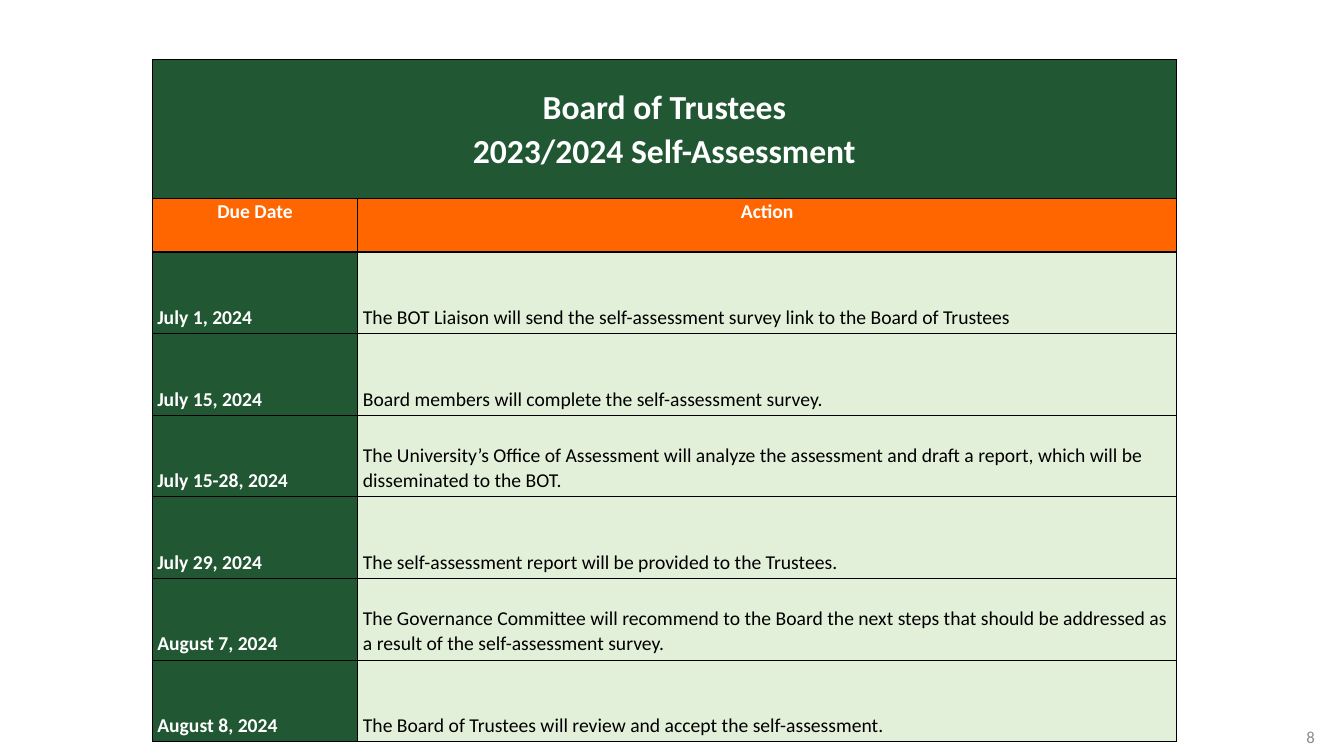
from dataclasses import dataclass

from lxml import etree
from pptx import Presentation
from pptx.dml.color import RGBColor
from pptx.enum.text import MSO_ANCHOR, PP_ALIGN
from pptx.oxml.ns import qn
from pptx.util import Inches, Pt

LEFT, CENTER, RIGHT = PP_ALIGN.LEFT, PP_ALIGN.CENTER, PP_ALIGN.RIGHT
TOP, MIDDLE, BOTTOM = MSO_ANCHOR.TOP, MSO_ANCHOR.MIDDLE, MSO_ANCHOR.BOTTOM

FONT = "Calibri"
GREEN, ORANGE, PALE = "215732", "FF6600", "E2EFD9"
WHITE, BLACK, GRAY = "FFFFFF", "000000", "8C8C8C"
COL_WIDTHS = (2.04, 8.12)
TITLE_HEIGHT, HEADER_HEIGHT, STEP_HEIGHT = 1.38, 0.53, 0.81


@dataclass
class Step:
    due: str
    action: str


STEPS = [
    Step("July 1, 2024",
         "The BOT Liaison will send the self-assessment survey link to the Board of Trustees"),
    Step("July 15, 2024", "Board members will complete the self-assessment survey."),
    Step("July 15-28, 2024",
         "The University’s Office of Assessment will analyze the assessment and draft a report, "
         "which will be disseminated to the BOT."),
    Step("July 29, 2024", "The self-assessment report will be provided to the Trustees."),
    Step("August 7, 2024",
         "The Governance Committee will recommend to the Board the next steps that should be "
         "addressed as a result of the self-assessment survey."),
    Step("August 8, 2024", "The Board of Trustees will review and accept the self-assessment."),
]


def rgb(color: str) -> RGBColor:
    return RGBColor.from_string(color)


def write(tf, text: str, *, size: float = 14, color: str = WHITE, bold: bool = True,
          align=LEFT, spacing: float = 1.07) -> None:
    tf.word_wrap = True
    for i, line in enumerate(text.split("\n")):
        p = tf.paragraphs[0] if i == 0 else tf.add_paragraph()
        p.alignment = align
        p.line_spacing = spacing
        r = p.add_run()
        r.text = line
        r.font.name = FONT
        r.font.size = Pt(size)
        r.font.bold = bold
        r.font.color.rgb = rgb(color)


def add_borders(cell) -> None:
    tc_pr = cell._tc.get_or_add_tcPr()
    for i, side in enumerate(("a:lnL", "a:lnR", "a:lnT", "a:lnB")):
        ln = etree.Element(qn(side), w=str(Pt(1)))
        fill = etree.SubElement(ln, qn("a:solidFill"))
        etree.SubElement(fill, qn("a:srgbClr"), val=BLACK)
        tc_pr.insert(i, ln)


def fill_cell(cell, text: str, fill: str, anchor, **text_format) -> None:
    cell.fill.solid()
    cell.fill.fore_color.rgb = rgb(fill)
    cell.margin_left = cell.margin_right = Inches(0.05)
    cell.margin_top = 0
    cell.margin_bottom = Inches(0.04) if anchor == BOTTOM else 0
    cell.vertical_anchor = anchor
    write(cell.text_frame, text, **text_format)


def add_schedule(s) -> None:
    heights = [TITLE_HEIGHT, HEADER_HEIGHT] + [STEP_HEIGHT] * len(STEPS)
    table = s.shapes.add_table(len(heights), len(COL_WIDTHS), Inches(1.51), Inches(0.59),
                               Inches(sum(COL_WIDTHS)), Inches(sum(heights))).table
    for col, width in zip(table.columns, COL_WIDTHS):
        col.width = Inches(width)
    for row, height in zip(table.rows, heights):
        row.height = Inches(height)

    title = table.cell(0, 0)
    title.merge(table.cell(0, 1))
    fill_cell(title, "Board of Trustees\n2023/2024 Self-Assessment", GREEN, MIDDLE,
              size=24, align=CENTER)
    for col, heading in enumerate(("Due Date", "Action")):
        fill_cell(table.cell(1, col), heading, ORANGE, TOP, align=CENTER)
    for row, step in enumerate(STEPS, start=2):
        fill_cell(table.cell(row, 0), step.due, GREEN, BOTTOM)
        fill_cell(table.cell(row, 1), step.action, PALE, BOTTOM, color=BLACK, bold=False)
    for cell in table.iter_cells():
        add_borders(cell)


def add_page_number(s) -> None:
    tf = s.shapes.add_textbox(Inches(12.69), Inches(7.14), Inches(0.45), Inches(0.33)).text_frame
    tf.vertical_anchor = MIDDLE
    write(tf, "8", size=12, color=GRAY, bold=False, align=RIGHT, spacing=1.0)


def main() -> None:
    prs = Presentation()
    prs.slide_width, prs.slide_height = Inches(13.33), Inches(7.5)
    s = prs.slides.add_slide(prs.slide_layouts[6])
    add_page_number(s)
    add_schedule(s)
    prs.save("out.pptx")


if __name__ == "__main__":
    main()
